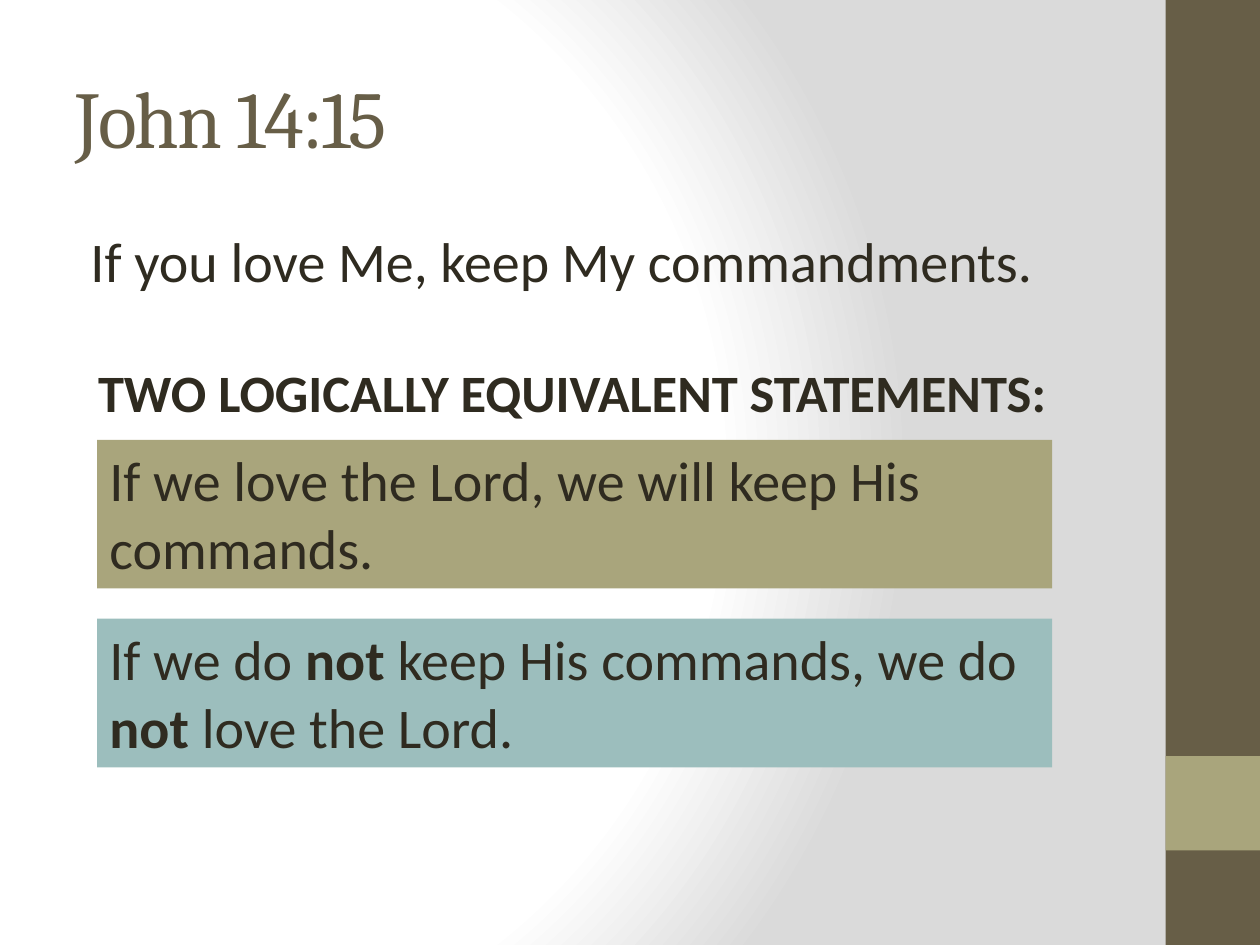
from lxml import etree
from pptx import Presentation
from pptx.dml.color import RGBColor
from pptx.enum import shapes, text
from pptx.oxml import parse_xml
from pptx.oxml.ns import nsdecls, qn
from pptx.util import Inches, Pt

HUE = {"brown": "675E47", "olive": "A9A57C", "teal": "9CBEBD",
       "ink": "2F2B20", "white": "FFFFFF", "gray": "DADADA"}

deck = Presentation()
deck.slide_width, deck.slide_height = Inches(10), Inches(7.5)
slide = deck.slides.add_slide(deck.slide_layouts[6])

# Background: white glow on the left, fading to gray
slide.background.fill.gradient()
grad = slide.element.find(".//" + qn("a:gradFill"))
for part in list(grad):
    grad.remove(part)
stops = "".join(
    f'<a:gs pos="{pos * 1000}"><a:srgbClr val="{HUE[name]}"/></a:gs>'
    for pos, name in [(0, "white"), (75, "white"), (100, "gray")])
grad.append(parse_xml(f'<a:gsLst {nsdecls("a")}>{stops}</a:gsLst>'))
glow = etree.SubElement(grad, qn("a:path"), {"path": "circle"})
rim = {"l": "20000", "t": "50000", "r": "100000", "b": "50000"}
etree.SubElement(glow, qn("a:fillToRect"), rim)


def add_box(area, fill):
    box = slide.shapes.add_shape(shapes.MSO_SHAPE.RECTANGLE, *map(Inches, area))
    box.shadow.inherit = False
    box.fill.solid()
    box.fill.fore_color.rgb = RGBColor.from_string(HUE[fill])
    box.line.fill.background()
    return box


def write(box, runs, size=32, font="Calibri", hue="ink", anchor="TOP"):
    """Fill the box with one left-aligned line of (words, bold) runs."""
    frame = box.text_frame
    frame.word_wrap = True
    frame.vertical_anchor = text.MSO_ANCHOR[anchor]
    line = frame.paragraphs[0]
    line.alignment = text.PP_ALIGN.LEFT
    for words, bold in runs:
        run = line.add_run()
        run.text = words
        look = {"name": font, "size": Pt(size), "bold": bold}
        for key, value in look.items():
            setattr(run.font, key, value)
        run.font.color.rgb = RGBColor.from_string(HUE[hue])
    return line


# Side band
add_box((9.25, 0, 0.75, 7.5), "brown")
add_box((9.25, 6, 0.75, 0.75), "olive")

# Title, verse and heading
title = slide.shapes.add_textbox(*map(Inches, (0.5, 0.3, 8.33, 1.25)))
line = write(title, [("John 14:15", False)], 46, "Cambria", "brown", "MIDDLE")
line.runs[0].font._element.set("spc", "-100")

verse = slide.shapes.add_textbox(*map(Inches, (0.5, 1.75, 8.33, 5.25)))
line = write(verse, [("If you love Me, keep My commandments.", False)])
line.space_before = Pt(6.4)
line._p.get_or_add_pPr().set("marL", str(Inches(0.12)))

# Two equivalent statements
claims = [
    ("olive", [("If we love the Lord, we will keep His commands.", False)]),
    ("teal", [("If we do ", False), ("not", True),
              (" keep His commands, we do ", False), ("not", True),
              (" love the Lord.", False)]),
]
for row, (fill, runs) in enumerate(claims):
    write(add_box((0.77, 3.49 + row * 1.42, 7.58, 1.18), fill), runs)

head = slide.shapes.add_textbox(*map(Inches, (0.68, 2.81, 8.23, 0.61)))
write(head, [("TWO LOGICALLY EQUIVALENT STATEMENTS:", True)], 30)

deck.save("out.pptx")
